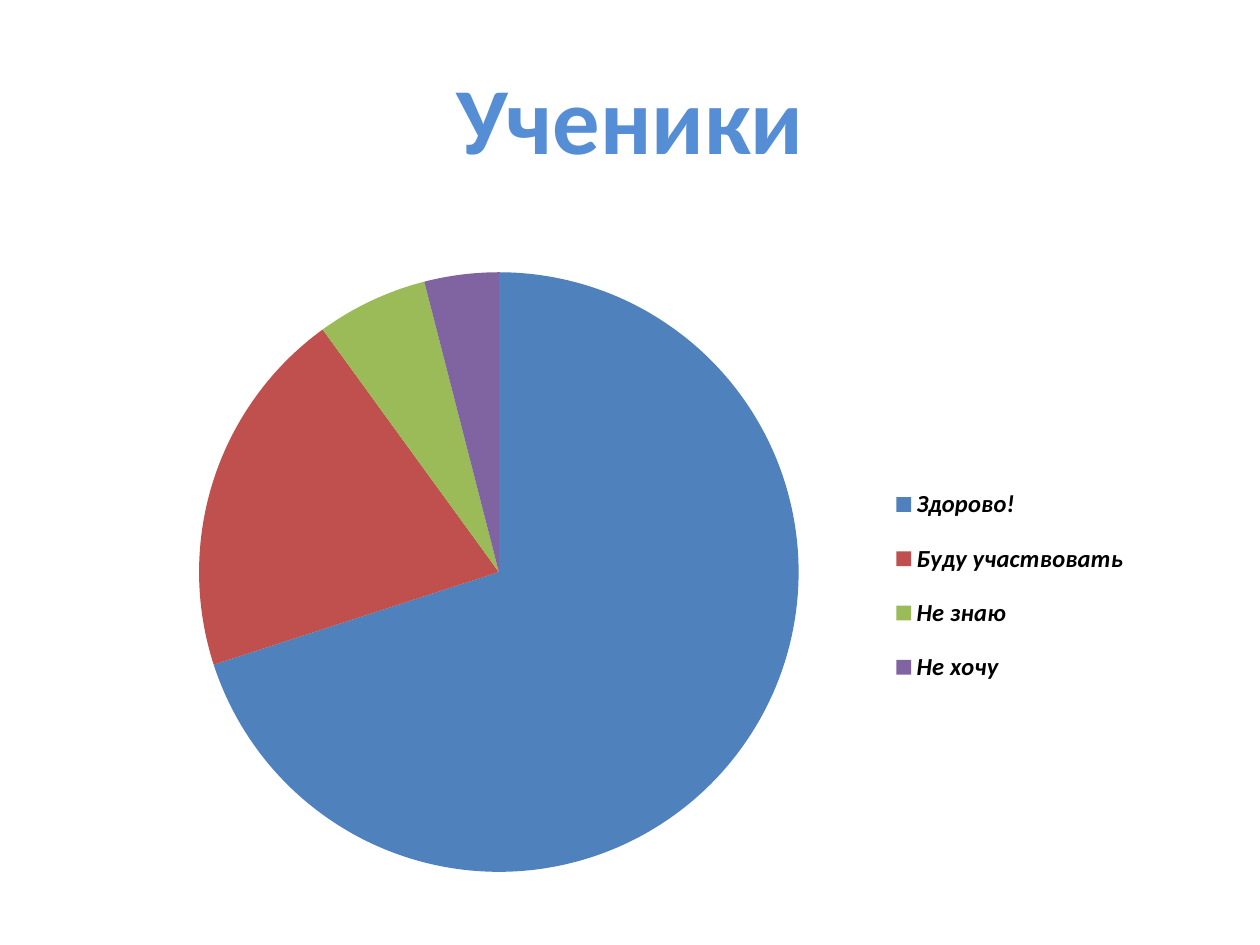
from lxml import etree
from pptx import Presentation
from pptx.chart.data import CategoryChartData
from pptx.dml.color import RGBColor
from pptx.enum.chart import XL_CHART_TYPE, XL_LEGEND_POSITION
from pptx.enum.text import MSO_ANCHOR, PP_ALIGN
from pptx.oxml.ns import qn
from pptx.util import Inches, Pt

PIE = XL_CHART_TYPE.PIE
RIGHT = XL_LEGEND_POSITION.RIGHT
MIDDLE = MSO_ANCHOR.MIDDLE
CENTER = PP_ALIGN.CENTER


def style_font(font, size, color, bold=False, italic=False):
    font.name = "Calibri"
    font.size = Pt(size)
    font.bold = bold
    font.italic = italic
    font.color.rgb = RGBColor.from_string(color)


def place(element, index, settings):
    for old_layout in element.findall(qn("c:layout")):
        element.remove(old_layout)
    layout = etree.Element(qn("c:layout"))
    manual = etree.SubElement(layout, qn("c:manualLayout"))
    for name, value in settings.items():
        etree.SubElement(manual, qn(f"c:{name}")).set("val", str(value))
    element.insert(index, layout)


presentation = Presentation()
presentation.slide_width = Inches(10)
presentation.slide_height = Inches(7.5)
width, height = presentation.slide_width, presentation.slide_height
slide = presentation.slides.add_slide(presentation.slide_layouts[6])

title = slide.shapes.add_textbox(
    int(width * 0.05), int(height * 0.04), int(width * 0.9), Inches(1.25))
title.text_frame.word_wrap = True
title.text_frame.vertical_anchor = MIDDLE
paragraph = title.text_frame.paragraphs[0]
paragraph.text = "Ученики"
paragraph.alignment = CENTER
style_font(paragraph.font, 54, "558ED5", bold=True)

answers = [
    ("Здорово!", 70, "4F81BD"),
    ("Буду участвовать", 20, "C0504D"),
    ("Не знаю", 6, "9BBB59"),
    ("Не хочу", 4, "8064A2"),
]
chart_data = CategoryChartData()
chart_data.categories = [answer for answer, share, color in answers]
chart_data.add_series("Series 1", [share for answer, share, color in answers])
chart = slide.shapes.add_chart(
    PIE, Inches(1.02), Inches(1.56), Inches(8.28), Inches(5.47), chart_data).chart
chart.has_title = False
style_font(chart.font, 10, "000000")

plot = chart.plots[0]
plot.vary_by_categories = True
for index, (answer, share, color) in enumerate(answers):
    fill = plot.series[0].points[index].format.fill
    fill.solid()
    fill.fore_color.rgb = RGBColor.from_string(color)

chart.has_legend = True
legend = chart.legend
legend.position = RIGHT
legend.include_in_layout = False
style_font(legend.font, 14, "000000", bold=True, italic=True)

edges = {"xMode": "edge", "yMode": "edge"}
plot_area = chart.element.find(".//" + qn("c:plotArea"))
legend_area = chart.element.find(".//" + qn("c:legend"))
place(plot_area, 0, {"layoutTarget": "inner", **edges,
                     "x": 0.02, "y": 0.11, "w": 0.67, "h": 0.87})
place(legend_area, 1, {**edges, "x": 0.72, "y": 0.39, "w": 0.25, "h": 0.35})

presentation.save("out.pptx")
